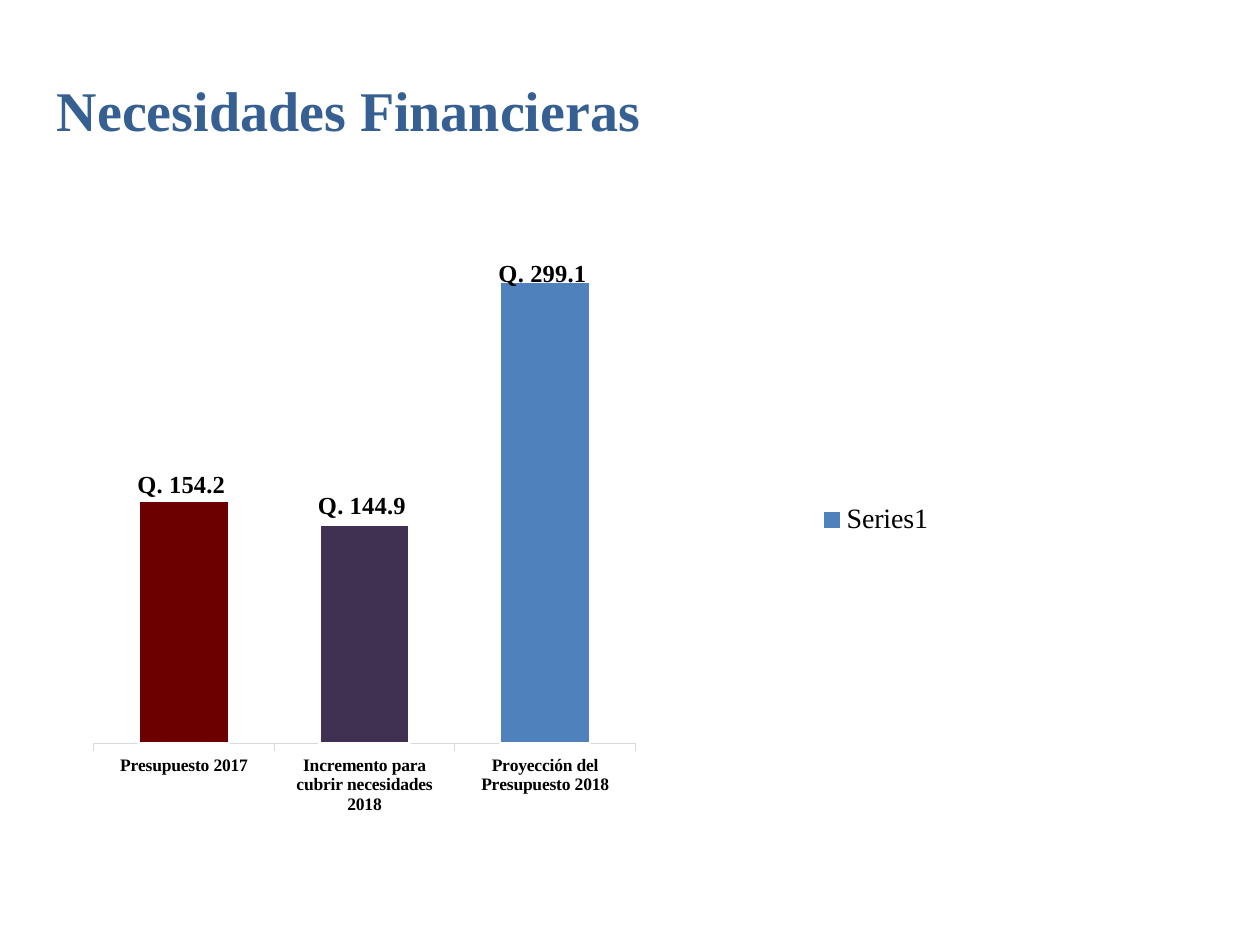
from lxml.etree import Element, SubElement
from pptx import Presentation
from pptx.chart.data import CategoryChartData
from pptx.dml.color import RGBColor
from pptx.enum.chart import (XL_CHART_TYPE, XL_LABEL_POSITION,
                             XL_LEGEND_POSITION, XL_TICK_LABEL_POSITION,
                             XL_TICK_MARK)
from pptx.enum.text import MSO_ANCHOR
from pptx.oxml.ns import qn
from pptx.util import Pt

TITLE = "Necesidades Financieras"
FONT = "Times New Roman"
# category, value, label, label drop in points, bar colour
BARS = [
    ("Presupuesto 2017", 154200000, "Q. 154.2", 2, "6C0000"),
    ("Incremento para cubrir necesidades 2018", 139100000, "Q. 144.9", 0.2,
     "403152"),
    ("Proyección del Presupuesto 2018", 293200000, "Q. 299.1", 6, "4F81BD"),
]
# points, measured inside the chart
WIDE, HIGH = 618, 371
PLOT = {"x": 28.5, "y": 15.5, "w": 309.6, "h": 315.4}
KEY = {"x": 440.5, "y": 190.7}
SHIFT = -1.5


def color(code):
    return RGBColor.from_string(code)


def style(font, size, bold=False, code="000000"):
    font.name, font.size, font.bold = FONT, Pt(size), bold
    font.color.rgb = color(code)


def place(root, spots, after=None, mode=None):
    """Fix a chart part at the given points, as fractions of the chart."""
    layout = root.find(qn("c:layout"))
    if layout is None:
        layout = Element(qn("c:layout"))
        if after:
            root.find(qn(after)).addnext(layout)
        else:
            root.insert(0, layout)
    box = SubElement(layout, qn("c:manualLayout"))
    if "w" in spots:
        SubElement(box, qn("c:layoutTarget")).set("val", "inner")
    if mode:
        for key in ("x", "y"):
            SubElement(box, qn(f"c:{key}Mode")).set("val", mode)
    for key, val in spots.items():
        part = val / (WIDE if key in "xw" else HIGH)
        SubElement(box, qn(f"c:{key}")).set("val", f"{part:.4f}")


def add_title(slide):
    box = slide.shapes.add_textbox(Pt(25.4), Pt(15), Pt(375), Pt(95))
    frame = box.text_frame
    frame.word_wrap = True
    frame.vertical_anchor = MSO_ANCHOR.MIDDLE
    frame.text = TITLE
    style(frame.paragraphs[0].runs[0].font, 32, True, "376092")


def add_bars(slide):
    data = CategoryChartData()
    data.categories = [bar[0] for bar in BARS]
    data.add_series("", [bar[1] for bar in BARS])
    chart = slide.shapes.add_chart(
        XL_CHART_TYPE.COLUMN_CLUSTERED, Pt(25), Pt(94.5), Pt(WIDE), Pt(HIGH),
        data).chart
    chart.has_title = False
    style(chart.font, 10)
    chart.font.name = "Calibri"

    plot = chart.plots[0]
    plot.gap_width = 100
    plot.vary_by_categories = False
    place(plot._element.getparent(), PLOT, mode="edge")

    series = plot.series[0]
    # An unnamed series gets its default name in the legend
    root = series._element
    root.remove(root.find(qn("c:tx")))
    series.format.fill.solid()
    series.format.fill.fore_color.rgb = color(BARS[-1][-1])
    series.format.line.color.rgb = color("FFFFFF")
    series.format.line.width = Pt(1.5)
    labels = series.data_labels
    labels.show_value = labels.show_category_name = True
    style(labels.font, 14, True)
    for i, (_, _, text, drop, code) in enumerate(BARS):
        point = series.points[i]
        point.format.fill.solid()
        point.format.fill.fore_color.rgb = color(code)
        point.format.line.color.rgb = color("FFFFFF")
        point.format.line.width = Pt(1.5)
        label = point.data_label
        label.text_frame.text = text
        style(label.text_frame.paragraphs[0].runs[0].font, 14, True)
        label.position = XL_LABEL_POSITION.OUTSIDE_END
        place(labels._element.findall(qn("c:dLbl"))[i],
              {"x": SHIFT, "y": drop}, "c:idx")

    axis = chart.category_axis
    axis.major_tick_mark = XL_TICK_MARK.OUTSIDE
    axis.tick_label_position = XL_TICK_LABEL_POSITION.LOW
    axis.format.line.color.rgb = color("D9D9D9")
    axis.format.line.width = Pt(0.75)
    style(axis.tick_labels.font, 10, True)
    scale = chart.value_axis
    scale.minimum_scale, scale.maximum_scale = 0, 350000000
    scale.has_major_gridlines = False
    scale.visible = False

    chart.has_legend = True
    legend = chart.legend
    legend.position = XL_LEGEND_POSITION.RIGHT
    legend.include_in_layout = False
    style(legend.font, 16)
    place(legend._element, KEY, "c:legendPos", "edge")


def main():
    deck = Presentation()
    deck.slide_width, deck.slide_height = Pt(720), Pt(540)
    slide = deck.slides.add_slide(deck.slide_layouts[6])
    add_title(slide)
    add_bars(slide)
    deck.save("out.pptx")


if __name__ == "__main__":
    main()
